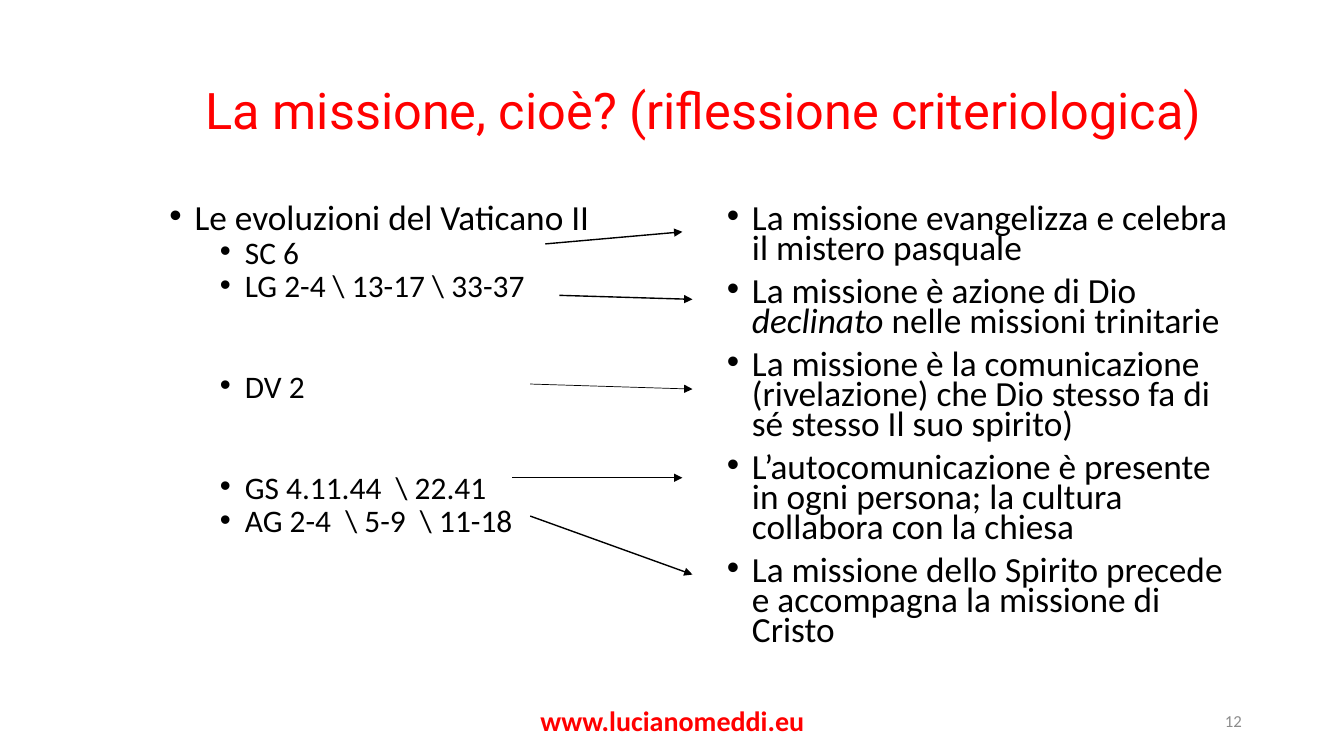
from lxml.etree import SubElement
from pptx import Presentation
from pptx.dml.color import RGBColor
from pptx.enum.shapes import MSO_CONNECTOR as Connector
from pptx.enum.text import MSO_ANCHOR as Anchor, MSO_AUTO_SIZE as AutoSize, PP_ALIGN as Align
from pptx.oxml.ns import qn
from pptx.util import Inches, Pt

COLORS = {"accent": "FF0000", "text": "000000", "muted": "8C8C8C"}
COLUMNS, ROWS = 80, 45
LEVEL_SIZES = (25.2, 22.4)
LEVEL_GAPS = (10, 5)
LEVEL_INDENTS = (0.25, 0.75)
HANGING = 0.25
WIDE_GAP = 53.2


class MissionSlide:
    def __init__(self, deck):
        self.deck = deck
        self.slide = deck.slides.add_slide(deck.slide_layouts[3])

    def x(self, columns):
        return round(self.deck.slide_width * columns / COLUMNS)

    def y(self, rows):
        return round(self.deck.slide_height * rows / ROWS)

    def area(self, left, top, width, height):
        return self.x(left), self.y(top), self.x(width), self.y(height)

    def style(self, paragraph, size, color, face="Calibri", bold=False):
        for run in paragraph.runs:
            run.font.size = Pt(size)
            run.font.name = face
            run.font.bold = bold
            run.font.color.rgb = RGBColor.from_string(COLORS[color])

    def placeholder(self, index, area):
        holder = self.slide.placeholders[index]
        holder.left, holder.top, holder.width, holder.height = self.area(*area)
        holder.text_frame.auto_size = AutoSize.NONE
        holder.text_frame.word_wrap = True
        return holder.text_frame

    def title(self, wording, area):
        frame = self.placeholder(0, area)
        frame.text = wording
        frame.vertical_anchor = Anchor.MIDDLE
        heading = frame.paragraphs[0]
        heading.alignment = Align.LEFT
        heading.line_spacing = 0.9
        self.style(heading, 36, "accent", "Roboto")

    def bullets(self, index, area, points):
        frame = self.placeholder(index, area)
        for number, (level, wording, gap) in enumerate(points):
            point = frame.add_paragraph() if number else frame.paragraphs[0]
            point.level = level
            point.line_spacing = 0.7
            point.space_before = Pt((gap or LEVEL_GAPS[level]) if number else 0)
            point.space_after = Pt(0)
            properties = point._p.get_or_add_pPr()
            properties.set("marL", str(Inches(LEVEL_INDENTS[level])))
            properties.set("indent", str(-Inches(HANGING)))
            SubElement(properties, qn("a:buFont"), typeface="Arial")
            SubElement(properties, qn("a:buChar"), char="•")
            for part, piece in enumerate(wording.split("*")):
                run = point.add_run()
                run.text = piece
                run.font.italic = part % 2 == 1
            self.style(point, LEVEL_SIZES[level], "text")

    def arrow(self, start, end, weight):
        link = self.slide.shapes.add_connector(
            Connector.STRAIGHT, self.x(start[0]), self.y(start[1]), self.x(end[0]), self.y(end[1]))
        link.line.color.rgb = RGBColor.from_string(COLORS["text"])
        link.line.width = Pt(weight)
        SubElement(link.line._get_or_add_ln(), qn("a:tailEnd"), type="triangle")
        SubElement(link._element.spPr, qn("a:effectLst"))

    def footer(self, wording, area, size, color, align, bold=False):
        frame = self.slide.shapes.add_textbox(*self.area(*area)).text_frame
        frame.word_wrap = True
        frame.vertical_anchor = Anchor.MIDDLE
        frame.text = wording
        frame.paragraphs[0].alignment = align
        self.style(frame.paragraphs[0], size, color, bold=bold)


SOURCES = [
    (0, "Le evoluzioni del Vaticano II", None),
    (1, "SC 6", None),
    (1, r"LG 2-4 \ 13-17 \ 33-37", None),
    (1, "DV 2", WIDE_GAP),
    (1, r"GS 4.11.44  \ 22.41", WIDE_GAP),
    (1, r"AG 2-4  \ 5-9  \ 11-18", None),
]
MEANINGS = [
    "La missione evangelizza e celebra il mistero pasquale",
    "La missione è azione di Dio *declinato* nelle missioni trinitarie",
    "La missione è la comunicazione (rivelazione) che Dio stesso fa di sé stesso Il suo spirito)",
    "L’autocomunicazione è presente in ogni persona; la cultura collabora con la chiesa",
    "La missione dello Spirito precede e accompagna la missione di Cristo",
]
ARROWS = [
    ((32.46, 14.52), (40.62, 13.8), 1),
    ((33.3, 17.58), (41.22, 17.82), 1),
    ((31.56, 22.86), (41.22, 23.16), 0.5),
    ((30.48, 28.44), (40.62, 28.44), 1),
    ((31.56, 30.72), (41.22, 34.2), 1),
]


def main():
    deck = Presentation()
    deck.slide_width, deck.slide_height = Inches(13.33), Inches(7.5)
    mission = MissionSlide(deck)
    mission.title("La missione, cioè? (riflessione criteriologica)", (11.64, 2.4, 62.82, 8.7))
    mission.bullets(1, (9.48, 12, 31.74, 28.56), SOURCES)
    mission.bullets(2, (42.66, 12, 31.8, 28.56), [(0, meaning, None) for meaning in MEANINGS])
    for start, end, weight in ARROWS:
        mission.arrow(start, end, weight)
    mission.footer("www.lucianomeddi.eu", (26.52, 41.7, 27, 2.4), 20, "accent", Align.CENTER, bold=True)
    mission.footer("12", (56.52, 41.7, 18, 2.4), 12, "muted", Align.RIGHT)
    deck.save("out.pptx")


if __name__ == "__main__":
    main()
